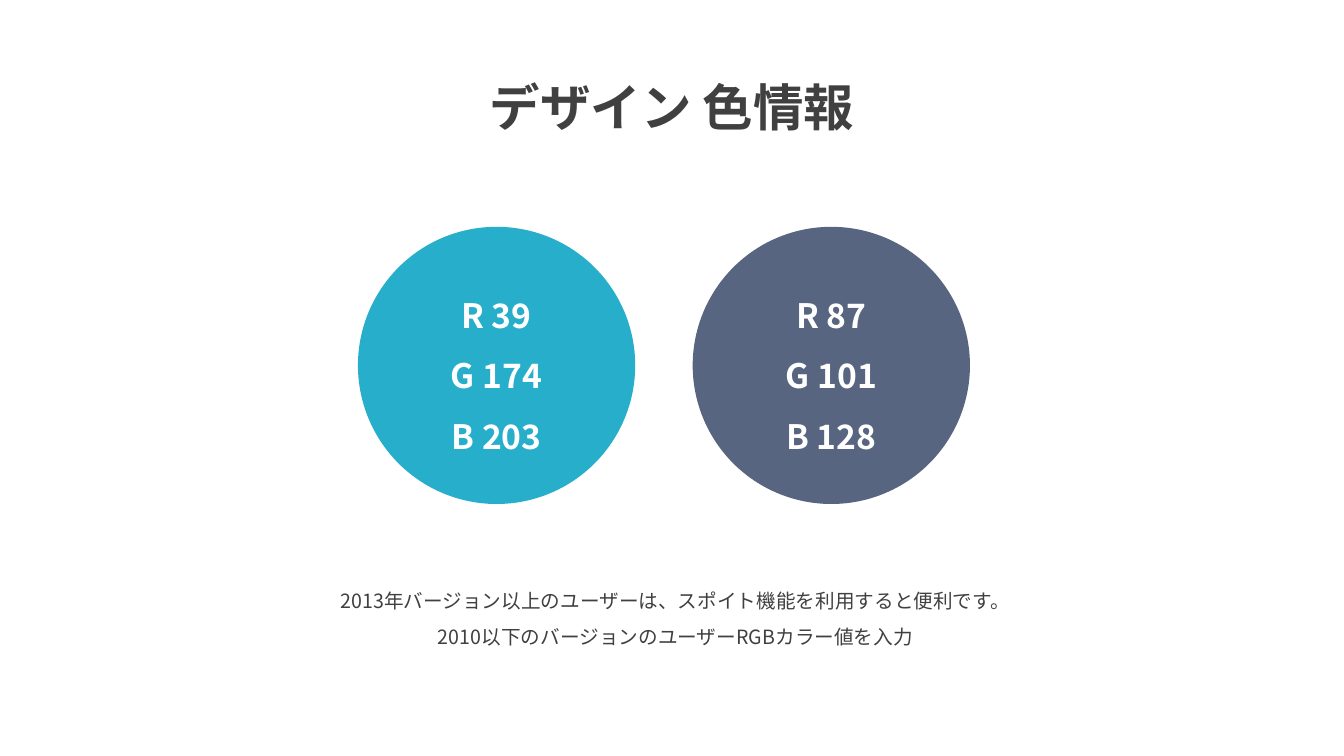
from lxml.etree import SubElement
from pptx import Presentation
from pptx.dml.color import RGBColor
from pptx.enum.shapes import MSO_SHAPE
from pptx.enum.text import MSO_ANCHOR, MSO_AUTO_SIZE, PP_ALIGN
from pptx.oxml.ns import qn
from pptx.util import Inches, Pt

TEAL = RGBColor(39, 174, 203)
SLATE = RGBColor(87, 101, 128)
DARK = RGBColor(64, 64, 64)
WHITE = RGBColor(255, 255, 255)
FONT = "Noto Sans CJK KR"
TITLE_ONLY = 5


class ColorSlide:
    def __init__(self, prs):
        self.s = prs.slides.add_slide(prs.slide_layouts[TITLE_ONLY])

    def set_text(self, sp, text, size, color, bold=False, anchor=MSO_ANCHOR.TOP):
        tf = sp.text_frame
        tf.text = text
        tf.word_wrap = True
        tf.vertical_anchor = anchor
        for p in tf.paragraphs:
            p.alignment = PP_ALIGN.CENTER
            p.line_spacing = 1.5
            for r in p.runs:
                r.font.size = Pt(size)
                r.font.bold = bold
                r.font.color.rgb = color
                r.font.name = FONT
                # East Asian characters take their font from a separate element
                SubElement(r._r.get_or_add_rPr(), qn("a:ea"), typeface=FONT)

    def title(self, text, left, top, width, height):
        sp = self.s.shapes.title
        sp.left, sp.top = Inches(left), Inches(top)
        sp.width, sp.height = Inches(width), Inches(height)
        self.set_text(sp, text, 36, DARK, bold=True)
        sp.text_frame.auto_size = MSO_AUTO_SIZE.SHAPE_TO_FIT_TEXT

    def swatch(self, color, left, top, diameter):
        """Draw a circle in the colour, labelled with its RGB values."""
        sp = self.s.shapes.add_shape(MSO_SHAPE.OVAL, Inches(left), Inches(top),
                                     Inches(diameter), Inches(diameter))
        sp.shadow.inherit = False
        sp.fill.solid()
        sp.fill.fore_color.rgb = color
        sp.line.fill.background()
        text = "\n".join(f"{name} {value}" for name, value in zip("RGB", color))
        self.set_text(sp, text, 24, WHITE, bold=True, anchor=MSO_ANCHOR.MIDDLE)

    def note(self, text, left, top, width, height):
        sp = self.s.shapes.add_textbox(Inches(left), Inches(top),
                                       Inches(width), Inches(height))
        self.set_text(sp, text, 14, DARK)
        sp.text_frame.auto_size = MSO_AUTO_SIZE.SHAPE_TO_FIT_TEXT


def main():
    prs = Presentation()
    prs.slide_width, prs.slide_height = Inches(13.33), Inches(7.5)
    slide = ColorSlide(prs)
    slide.title("デザイン 色情報", 4.24, 0.4, 4.85, 0.91)
    for color, left in ((SLATE, 6.87), (TEAL, 3.55)):
        slide.swatch(color, left, 2.25, 2.75)
    slide.note("2013年バージョン以上のユーザーは、スポイト機能を利用すると便利です。\n"
               "2010以下のバージョンのユーザーRGBカラー値を入力",
               2.52, 5.68, 8.36, 0.77)
    prs.save("out.pptx")


if __name__ == "__main__":
    main()
